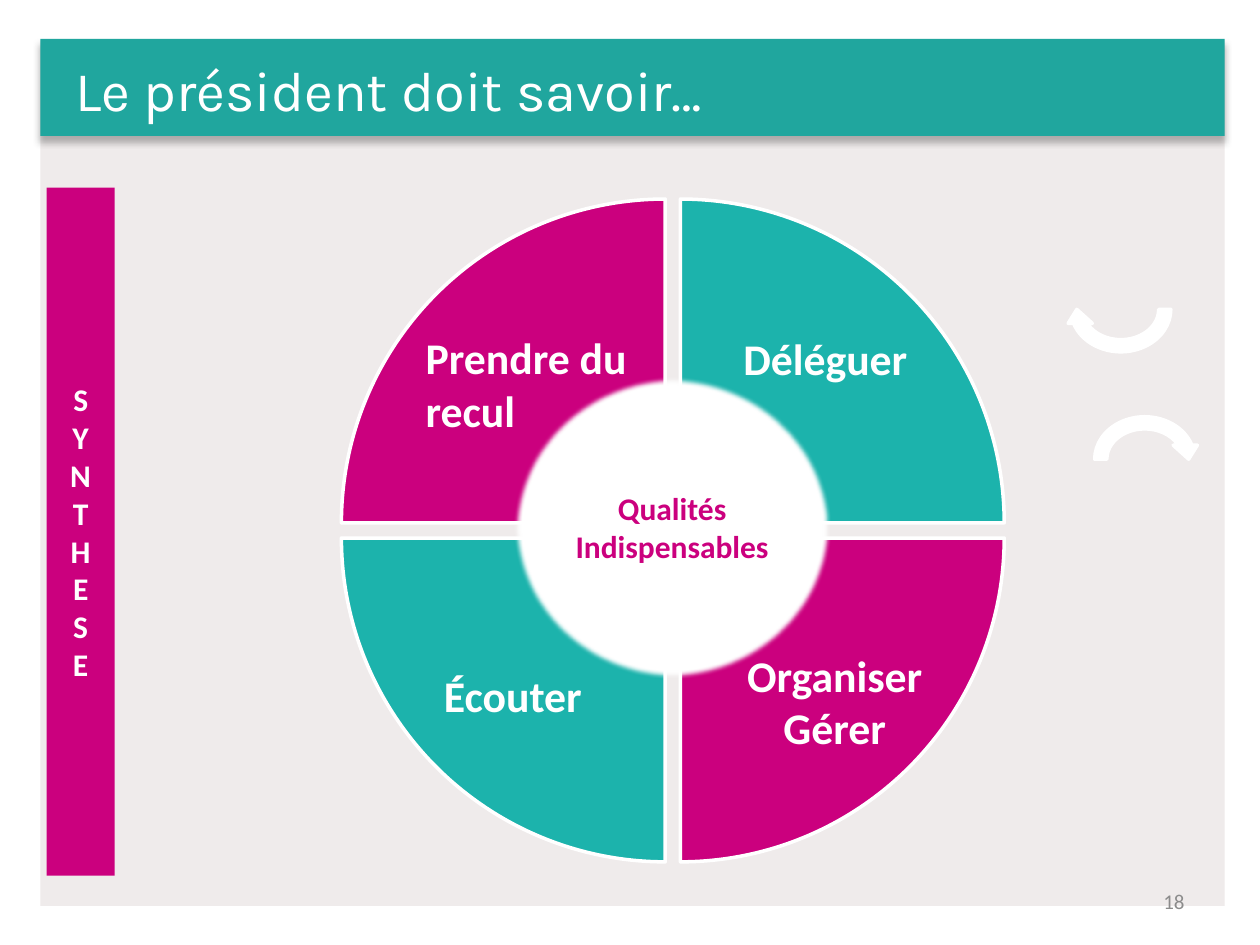
from lxml import etree
from pptx import Presentation
from pptx.dml.color import RGBColor
from pptx.enum.shapes import MSO_SHAPE
from pptx.enum.text import MSO_ANCHOR, PP_ALIGN
from pptx.oxml.ns import qn
from pptx.util import Inches, Pt

RECT, OVAL = MSO_SHAPE.RECTANGLE, MSO_SHAPE.OVAL
WEDGE, ARROW = MSO_SHAPE.PIE_WEDGE, MSO_SHAPE.CIRCULAR_ARROW
LEFT, MID, RIGHT = PP_ALIGN.LEFT, PP_ALIGN.CENTER, PP_ALIGN.RIGHT
TOP, CENTER = MSO_ANCHOR.TOP, MSO_ANCHOR.MIDDLE

HUES = {"panel": "EFEBEB", "band": "20A69E", "pink": "CB007E",
        "teal": "1CB3AC", "white": "FFFFFF", "gray": "8C8C8C", "shade": "595959"}

# Content
TITLE = "Le président doit savoir…"
SIDE = "SYNTHESE"
CORE = ["Qualités", "Indispensables"]
PAGE = "18"
# Lines, place, alignment
LABELS = [
    (["Prendre du", "recul"], (3.28, 2.58, 1.92, 0.94), LEFT),
    (["Écouter"], (3.28, 5.26, 1.58, 0.52), MID),
    (["Organiser", "Gérer"], (5.71, 5.1, 1.83, 0.94), MID),
    (["Déléguer"], (5.71, 2.58, 1.68, 0.52), MID),
]
# Column, row and fill, clockwise from top left
WEDGES = [(0, 0, "pink"), (1, 0, "teal"), (1, 1, "pink"), (0, 1, "teal")]
ARROWS = [(8.64, 3.26, 0), (8.45, 2.07, 180)]
WHEEL = (2.71, 1.58)
SIZE, STEP = 2.57, 2.69

deck = Presentation()
deck.slide_width, deck.slide_height = Inches(10), Inches(7.5)
slide = deck.slides.add_slide(deck.slide_layouts[6])


def color(name):
    return RGBColor.from_string(HUES[name])


def write(shape, lines, size, hue, align=LEFT, anchor=TOP, bold=True, font="Calibri"):
    frame = shape.text_frame
    frame.word_wrap = True
    frame.vertical_anchor = anchor
    for i, line in enumerate(lines):
        para = frame.paragraphs[0] if i == 0 else frame.add_paragraph()
        para.alignment = align
        run = para.add_run()
        run.text = line
        run.font.name, run.font.size, run.font.bold = font, Pt(size), bold
        run.font.color.rgb = color(hue)


def label(place, lines, *style, **more):
    box = slide.shapes.add_textbox(*map(Inches, place))
    write(box, lines, *style, **more)


def draw(kind, place, fill, edge=False, turn=0):
    shape = slide.shapes.add_shape(kind, *map(Inches, place))
    shape.shadow.inherit = False
    shape.fill.solid()
    shape.fill.fore_color.rgb = color(fill)
    if edge:
        shape.line.color.rgb = color("white")
        shape.line.width = Pt(2)
    else:
        shape.line.fill.background()
    shape.rotation = turn
    return shape


def effect(shape, tag, **attrs):
    group = shape.fill._xPr.find(qn("a:effectLst"))
    return etree.SubElement(group, qn(tag), **attrs)


# Panel and title band
draw(RECT, (0.32, 0.32, 9.4, 6.87), "panel")
band = draw(RECT, (0.32, 0.31, 9.4, 0.77), "band")
shade = effect(band, "a:outerShdw", blurRad=str(Pt(4)), dist=str(Pt(3)),
               dir=str(96 * 60000), algn="tl", rotWithShape="0")
tint = etree.SubElement(shade, qn("a:srgbClr"), val=HUES["shade"])
etree.SubElement(tint, qn("a:alpha"), val="43000")
label((0.5, 0.39, 9, 0.9), [TITLE], 32, "white", bold=False, font="Karla")
label((7.17, 6.95, 2.33, 0.4), [PAGE], 12, "gray", RIGHT, CENTER, bold=False)

# Side bar with stacked letters
side = draw(RECT, (0.37, 1.49, 0.54, 5.46), "pink")
write(side, [SIDE], 18, "white", MID, CENTER)
side.text_frame._txBody.bodyPr.set("vert", "wordArtVert")

# Wheel
for i, (col, row, fill) in enumerate(WEDGES):
    place = (WHEEL[0] + col * STEP, WHEEL[1] + row * STEP, SIZE, SIZE)
    draw(WEDGE, place, fill, True, 90 * i)
for x, y, turn in ARROWS:
    draw(ARROW, (x, y, 0.89, 0.77), "white", True, turn)

# Soft centre
core = draw(OVAL, (4.09, 3, 2.49, 2.37), "white", True)
effect(core, "a:softEdge", rad=str(Pt(2.5)))
core.text_frame.margin_left = core.text_frame.margin_right = 0
write(core, CORE, 18, "pink", MID, CENTER)

# Wheel labels
for lines, place, align in LABELS:
    label(place, lines, 25, "white", align)

deck.save("out.pptx")
